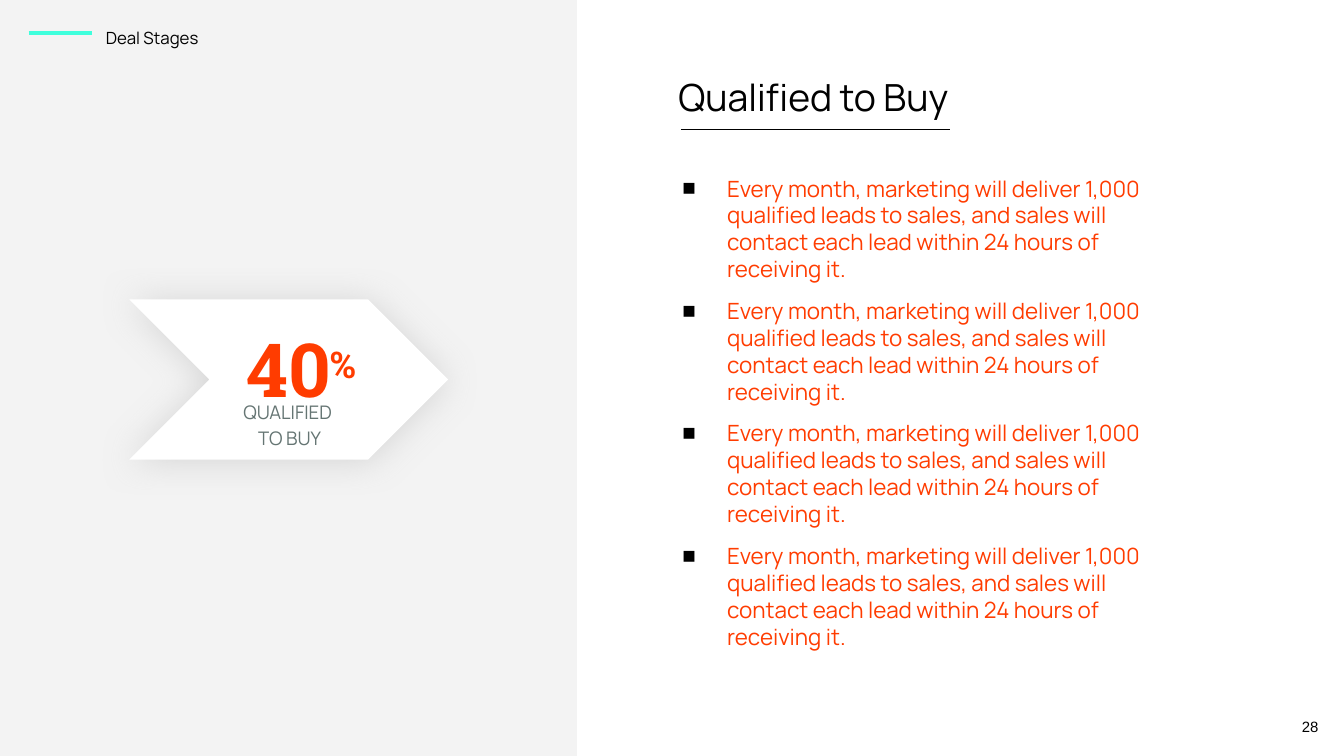
from copy import deepcopy

from lxml.etree import SubElement
from pptx import Presentation
from pptx.dml.color import RGBColor
from pptx.enum.shapes import MSO_CONNECTOR as Link, MSO_SHAPE as Shape
from pptx.enum.text import MSO_ANCHOR as Anchor, MSO_AUTO_SIZE as Fit, PP_ALIGN as Align
from pptx.oxml.ns import qn
from pptx.util import Pt

BLACK, WHITE, PANEL = "000000", "FFFFFF", "F3F3F3"
ORANGE, AQUA, SLATE, SHADE = "FF3C00", "3FFFDC", "657573", "B7B7B7"
GOAL = ("Every month, marketing will deliver 1,000 qualified leads to sales, "
        "and sales will contact each lead within 24 hours of receiving it.")


def color(code):
    """Turn a hex string into a colour."""
    return RGBColor.from_string(code)


def node(root, tag, **attrs):
    """Add an XML child with the given attributes."""
    return SubElement(root, qn(tag), {key: str(val) for key, val in attrs.items()})


def style(run, size, face, ink, bold=False):
    """Format one run."""
    font = run.font
    font.size, font.name, font.bold = Pt(size), face, bold
    font.color.rgb = color(ink)


def write(frame, lines, size=12, face="Manrope", ink=BLACK, bold=False,
          align=Align.LEFT, space=1, gap=0, mark=None, anchor=Anchor.TOP):
    """Fill a frame with formatted paragraphs."""
    frame.word_wrap, frame.auto_size = True, Fit.NONE
    frame.vertical_anchor = anchor
    frame.margin_left = frame.margin_right = Pt(7.2)
    frame.margin_top = frame.margin_bottom = Pt(7.2)
    for num, line in enumerate(lines):
        para = frame.add_paragraph() if num else frame.paragraphs[0]
        props = para._p.get_or_add_pPr()
        props.set("marL", str(Pt(36 if mark else 0)))
        props.set("indent", str(Pt(-24 if mark else 0)))
        if mark:
            node(node(props, "a:buClr"), "a:srgbClr", val=BLACK)
            node(props, "a:buFont", typeface="Arial")
            node(props, "a:buChar", char=mark)
        else:
            node(props, "a:buNone")
        para.alignment, para.line_spacing = align, space
        para.space_before, para.space_after = Pt(gap if num else 0), Pt(0)
        para.text = line
        for run in para.runs:
            style(run, size, face, ink, bold)
        for brk in para._p.findall(qn("a:br")):
            brk.append(deepcopy(para.runs[0]._r.rPr))


class Deck:
    """Hold the current slide and draw its elements."""

    def __init__(self):
        """Start a deck with one slide."""
        self.show = Presentation()
        self.show.slide_width, self.show.slide_height = Pt(720), Pt(405)
        self.slide = self.show.slides.add_slide(self.show.slide_layouts[4])
        self.items = self.slide.shapes

    def holder(self, idx, box, lines, **form):
        """Place and fill a placeholder in front."""
        item = next(p for p in self.slide.placeholders if p.placeholder_format.idx == idx)
        item.left, item.top, item.width, item.height = map(Pt, box)
        self.items.element.append(item.element)
        write(item.text_frame, lines, **form)
        return item.text_frame

    def label(self, box, lines, **form):
        """Add a text box."""
        write(self.items.add_textbox(*map(Pt, box)).text_frame, lines, **form)

    def shape(self, kind, box, fill):
        """Add a filled shape without an outline."""
        item = self.items.add_shape(kind, *map(Pt, box))
        item.shadow.inherit = False
        item.fill.solid()
        item.fill.fore_color.rgb = color(fill)
        item.line.fill.background()
        return item

    def shade(self, item, tint, blur, dist):
        """Give a shape a soft shadow straight below."""
        glow = node(item.element.spPr.find(qn("a:effectLst")), "a:outerShdw",
                    blurRad=Pt(blur), dist=Pt(dist), dir=5400000,
                    algn="bl", rotWithShape=0)
        node(node(glow, "a:srgbClr", val=tint), "a:alpha", val=50000)

    def rule(self, left, right, top, ink, width):
        """Add a level line."""
        line = self.items.add_connector(Link.STRAIGHT, Pt(left), Pt(top), Pt(right), Pt(top))
        line.line.color.rgb, line.line.width = color(ink), Pt(width)
        node(line.element.spPr, "a:effectLst")


def main():
    """Build and save the slide."""
    deck = Deck()
    deck.shape(Shape.RECTANGLE, (0, 0, 309, 405), PANEL)
    deck.label((670.3, 373.7, 43.2, 31), ["28"], size=8, face="Arial",
               align=Align.RIGHT, anchor=Anchor.MIDDLE)
    deck.holder(4, (49.5, 5.8, 290, 23), ["Deal Stages"], size=9, space=1.15)
    deck.rule(15.4, 49.4, 17.8, AQUA, 2.25)
    deck.holder(2, (346.3, 86.4, 290, 227.5), [GOAL] * 4, ink=ORANGE, gap=8, mark="■")
    deck.holder(0, (356.2, 32.4, 246, 31), ["Qualified to Buy"], size=20)
    deck.rule(364.8, 509, 69.5, BLACK, 0.75)
    arrow = deck.shape(Shape.CHEVRON, (69.3, 160.4, 170.8, 85.8), WHITE)
    deck.shade(arrow, SHADE, 19.1, 0.8)
    deck.holder(1, (93.6, 205.9, 123, 31), ["QUALIFIED \vTO BUY"], size=10,
                ink=SLATE, align=Align.CENTER, space=1.15)
    look = dict(face="Roboto Slab", ink=ORANGE, bold=True)
    share = deck.holder(3, (100, 158.4, 123, 48), ["40"], size=40,
                        align=Align.CENTER, space=1.15, **look)
    sign = share.paragraphs[0].add_run()
    sign.text = "%"
    style(sign, 34, **look)
    sign.font._element.set("baseline", "30000")
    deck.show.save("out.pptx")


if __name__ == "__main__":
    main()
